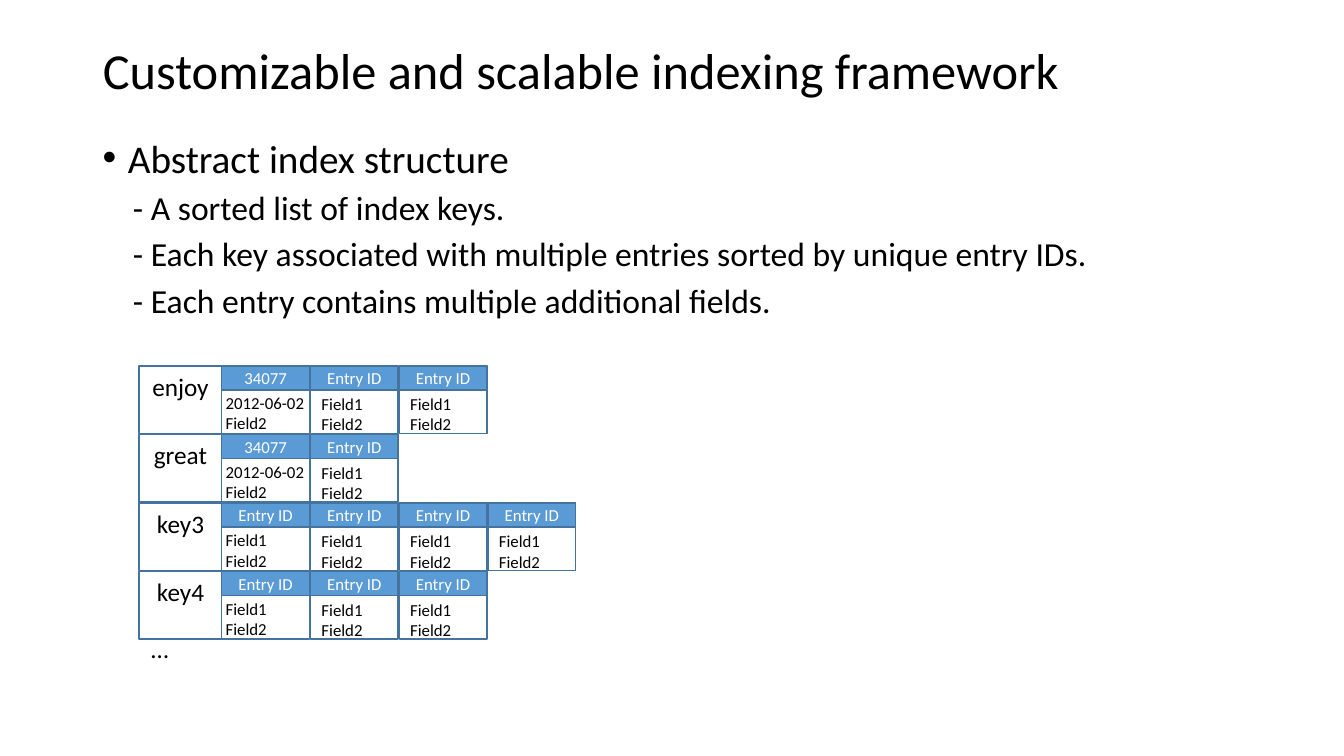
"""Build the slide on the abstract index structure."""
from lxml import etree
from pptx import Presentation
from pptx.dml.color import RGBColor
from pptx.enum.shapes import MSO_SHAPE
from pptx.enum.text import MSO_ANCHOR, MSO_AUTO_SIZE, PP_ALIGN
from pptx.oxml.ns import qn
from pptx.util import Inches, Pt

RECTANGLE = MSO_SHAPE.RECTANGLE
TOP, MIDDLE = MSO_ANCHOR.TOP, MSO_ANCHOR.MIDDLE
LEFT, CENTER = PP_ALIGN.LEFT, PP_ALIGN.CENTER
NO_FIT = MSO_AUTO_SIZE.NONE

TITLE = "Customizable and scalable indexing framework"
HEADING = "Abstract index structure"
POINTS = [
    "- A sorted list of index keys.",
    "- Each key associated with multiple entries sorted by unique entry IDs.",
    "- Each entry contains multiple additional fields.",
]
ENTRY = ("Entry ID", ["Field1", "Field2"])
DATED = ("34077", ["2012-06-02", "Field2"])
INDEX = [
    ("enjoy", [DATED, ENTRY, ENTRY]),
    ("great", [DATED, ENTRY]),
    ("key3", [ENTRY] * 4),
    ("key4", [ENTRY] * 3),
]

FONT = "Calibri"
BLACK, WHITE, BLUE, EDGE = "000000", "FFFFFF", "5B9BD5", "43739E"
GRID_LEFT, GRID_TOP = 1.38, 3.63
ROW_HEIGHT, ROW_STEP = 0.67, 0.68
KEY_WIDTH, ENTRY_WIDTH, ENTRY_STEP = 0.82, 0.87, 0.88
HEAD_HEIGHT = 0.24


def color(value):
    return RGBColor.from_string(value)


def place(shape, left, top, width, height):
    shape.left, shape.top = Inches(left), Inches(top)
    shape.width, shape.height = Inches(width), Inches(height)


def write(shape, lines, size, ink=BLACK, align=LEFT, anchor=TOP):
    frame = shape.text_frame
    frame.word_wrap = True
    frame.auto_size = NO_FIT
    frame.vertical_anchor = anchor
    frame.text = "\n".join(lines)
    for para in frame.paragraphs:
        para.alignment = align
        para.font.name = FONT
        para.font.size = Pt(size)
        para.font.color.rgb = color(ink)
    return frame.paragraphs


def add_text(page, bounds, lines, size):
    box = page.shapes.add_textbox(*map(Inches, bounds))
    return write(box, lines, size)


def add_cell(page, bounds, fill=None):
    cell = page.shapes.add_shape(RECTANGLE, *map(Inches, bounds))
    cell.shadow.inherit = False
    if fill:
        cell.fill.solid()
        cell.fill.fore_color.rgb = color(fill)
    else:
        cell.fill.background()
    cell.line.color.rgb = color(EDGE)
    cell.line.width = Pt(1)
    return cell


def indent(para, margin, first=0.0, bullet=None):
    properties = para._p.get_or_add_pPr()
    properties.set("marL", str(Inches(margin)))
    properties.set("indent", str(Inches(first)))
    if bullet:
        etree.SubElement(properties, qn("a:buFont")).set("typeface", "Arial")
        etree.SubElement(properties, qn("a:buChar")).set("char", bullet)


def add_points(page):
    paras = add_text(page, (0.92, 1.37, 11.81, 1.97), [HEADING] + POINTS, 24)
    for para in paras:
        para.line_spacing = 0.8
        para.space_before = Pt(10)
        indent(para, 0.3)
    paras[0].font.size = Pt(28)
    indent(paras[0], 0.25, -0.25, "•")


def add_entry(page, column, top, entry):
    name, fields = entry
    left = GRID_LEFT + KEY_WIDTH + column * ENTRY_STEP
    add_cell(page, (left, top, ENTRY_WIDTH, ROW_HEIGHT))
    head = add_cell(page, (left, top, ENTRY_WIDTH, HEAD_HEIGHT), BLUE)
    write(head, [name], 12, WHITE, CENTER, MIDDLE)
    shift, drop, width = (0.01, 0.23, 0.68) if column else (-0.06, 0.22, 1.05)
    add_text(page, (left + shift, top + drop, width, 0.5), fields, 12)


def main():
    deck = Presentation()
    deck.slide_width, deck.slide_height = Inches(13.33), Inches(7.5)
    page = deck.slides.add_slide(deck.slide_layouts[5])

    title = page.shapes.title
    place(title, 0.92, 0, 11.97, 1.45)
    write(title, [TITLE], 36, anchor=MIDDLE)[0].line_spacing = 0.9
    add_points(page)

    for row, (key, entries) in enumerate(INDEX):
        top = GRID_TOP + row * ROW_STEP
        for column, entry in enumerate(entries):
            add_entry(page, column, top, entry)
        cell = add_cell(page, (GRID_LEFT, top, KEY_WIDTH, ROW_HEIGHT))
        write(cell, [key], 18, align=CENTER)
    add_text(page, (1.4, 6.23, KEY_WIDTH, 0.4), ["…"], 18)

    deck.save("out.pptx")


if __name__ == "__main__":
    main()
